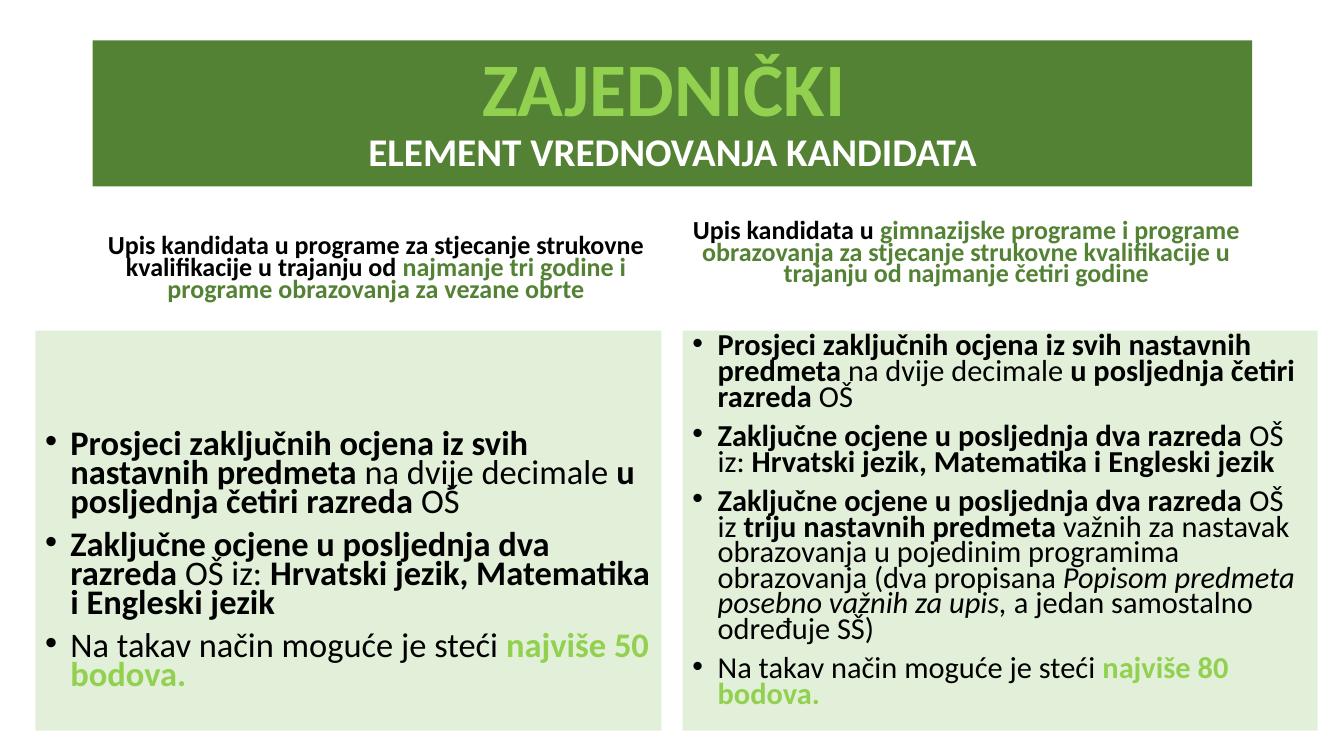
from lxml import etree
from pptx import Presentation
from pptx.dml.color import RGBColor
from pptx.enum.shapes import MSO_SHAPE as SHAPE
from pptx.enum.text import MSO_ANCHOR as ANCHOR, PP_ALIGN as ALIGN
from pptx.oxml.ns import qn
from pptx.util import Pt

PX = 9144  # EMU per px, 100 px to the inch
FONT = "Calibri"
INDENT = 25
COLORS = {"green": "548235", "lime": "92D050", "pale": "E2F0D9",
          "black": "000000", "white": "FFFFFF"}

# Each run is (text, style, colour); style holds "b" and/or "i"
AVERAGES = [("Prosjeci zaključnih ocjena iz svih nastavnih predmeta ", "b", "black"),
            ("na dvije decimale ", "", "black"),
            ("u posljednja četiri razreda ", "b", "black"),
            ("OŠ", "", "black")]
LAST_GRADES = ("Zaključne ocjene u posljednja dva razreda ", "b", "black")
SUBJECTS = [LAST_GRADES, ("OŠ iz: ", "", "black"),
            ("Hrvatski jezik, Matematika i Engleski jezik", "b", "black")]
THREE_SUBJECTS = [
    LAST_GRADES, ("OŠ iz ", "", "black"),
    ("triju nastavnih predmeta ", "b", "black"),
    ("važnih za nastavak obrazovanja u pojedinim programima obrazovanja "
     "(dva propisana ", "", "black"),
    ("Popisom predmeta posebno važnih za upis, ", "i", "black"),
    ("a jedan samostalno određuje SŠ)", "", "black")]


def max_points(points):
    return [("Na takav način moguće je steći ", "", "black"),
            (f"najviše {points} bodova.", "b", "lime")]


def rgb(name):
    return RGBColor.from_string(COLORS[name])


def set_frame(sp, anchor, top=5):
    tf = sp.text_frame
    tf.word_wrap = True
    tf.vertical_anchor = anchor
    tf.margin_left = tf.margin_right = 10 * PX
    tf.margin_top, tf.margin_bottom = top * PX, 5 * PX
    return tf


def add_panel(s, box, fill):
    sp = s.shapes.add_shape(SHAPE.RECTANGLE, *[v * PX for v in box])
    sp.shadow.inherit = False
    sp.fill.solid()
    sp.fill.fore_color.rgb = rgb(fill)
    sp.line.fill.background()
    return sp


def add_run(p, text, size, style, color):
    r = p.add_run()
    r.text = text
    font = r.font
    font.name, font.size = FONT, Pt(size)
    font.bold, font.italic = "b" in style, "i" in style
    font.color.rgb = rgb(color)


def fill_paragraph(p, runs, size, align):
    p.alignment = align
    p.line_spacing = 0.7
    p.space_before = Pt(10)
    for text, style, color in runs:
        add_run(p, text, size, style, color)


def add_bullet(p):
    ppr = p._p.get_or_add_pPr()
    ppr.set("marL", str(INDENT * PX))
    ppr.set("indent", str(-INDENT * PX))
    etree.SubElement(ppr, qn("a:buFont")).set("typeface", "Arial")
    etree.SubElement(ppr, qn("a:buChar")).set("char", "•")


def add_title(s, box):
    tf = set_frame(add_panel(s, box, "green"), ANCHOR.MIDDLE)
    p = tf.paragraphs[0]
    p.alignment = ALIGN.CENTER
    p.line_spacing = 0.9
    add_run(p, "ZAJEDNIČKI ", 54, "b", "lime")
    p.add_line_break()
    add_run(p, "ELEMENT VREDNOVANJA KANDIDATA", 28, "b", "white")


def add_heading(s, box, lead, programmes):
    sp = s.shapes.add_textbox(*[v * PX for v in box])
    tf = set_frame(sp, ANCHOR.BOTTOM)
    runs = [(lead, "b", "black"), (programmes, "b", "green")]
    fill_paragraph(tf.paragraphs[0], runs, 18.6, ALIGN.CENTER)


def add_bullet_panel(s, box, items, size, top=5):
    tf = set_frame(add_panel(s, box, "pale"), ANCHOR.TOP, top)
    for i, runs in enumerate(items):
        p = tf.add_paragraph() if i else tf.paragraphs[0]
        fill_paragraph(p, runs, size, ALIGN.LEFT)
        add_bullet(p)


def main():
    prs = Presentation()
    prs.slide_width, prs.slide_height = 1333 * PX, 750 * PX
    s = prs.slides.add_slide(prs.slide_layouts[6])

    # Title band
    add_title(s, (92, 40, 1150, 145))

    # Left column: three-year programmes
    add_heading(s, (91, 215, 564, 90),
                "Upis kandidata u programe za stjecanje strukovne "
                "kvalifikacije u trajanju od ",
                "najmanje tri godine i programe obrazovanja za vezane obrte")
    add_bullet_panel(s, (35, 328, 621, 397),
                     [AVERAGES, SUBJECTS, max_points(50)], 24.6, top=101)

    # Right column: four-year programmes
    add_heading(s, (675, 200, 567, 90), "Upis kandidata u ",
                "gimnazijske programe i programe obrazovanja za stjecanje "
                "strukovne kvalifikacije u trajanju od najmanje četiri godine")
    add_bullet_panel(s, (677, 328, 630, 397),
                     [AVERAGES, SUBJECTS, THREE_SUBJECTS, max_points(80)], 21.7)

    prs.save("out.pptx")


if __name__ == "__main__":
    main()
